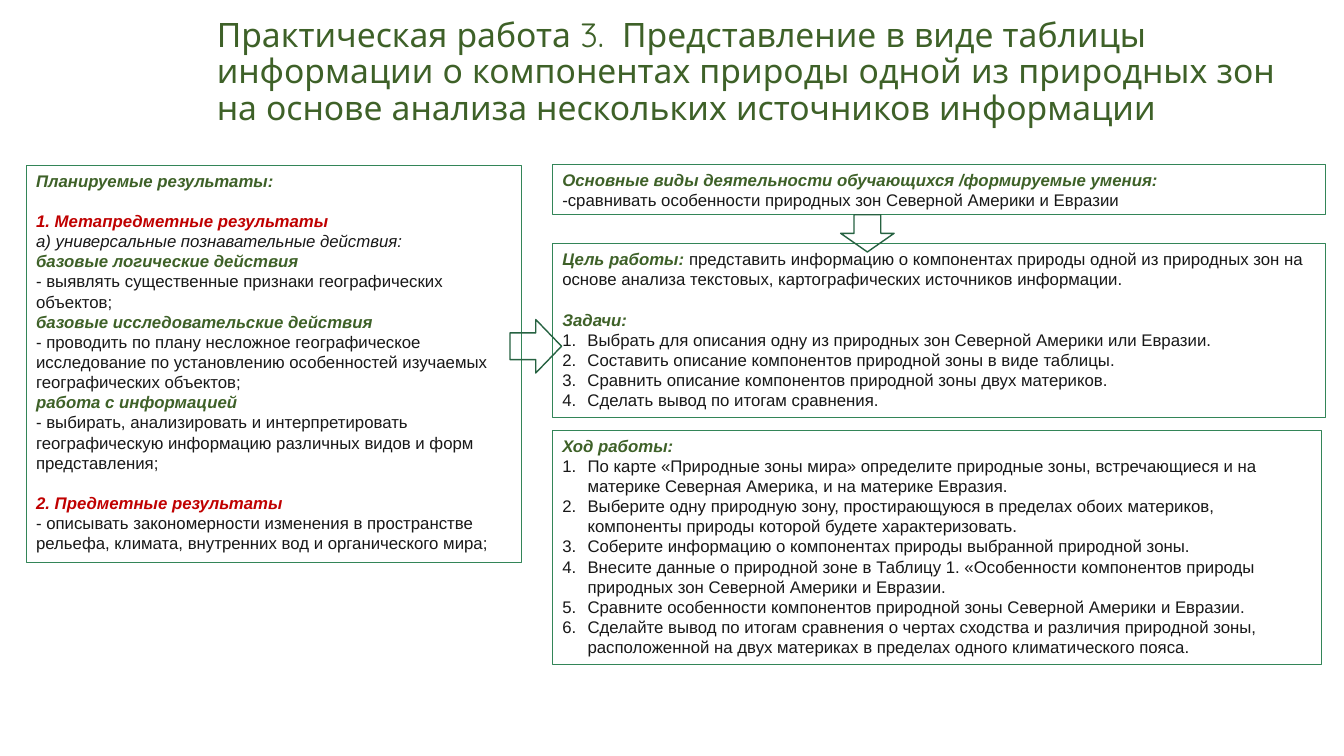
from pptx import Presentation
from pptx import util as u
from pptx.dml.color import RGBColor
from pptx.enum import shapes, text
from pptx.oxml import xmlchemy
from lxml import etree
from pptx.oxml.ns import qn

GREEN, RED, DARK = "3E6128", "C00000", "181818"
BORDER, ARROW = "338558", "266241"
GRID = 100

STYLES = {
    "heading": (GREEN, True, True),
    "result": (RED, True, True),
    "note": (DARK, False, True),
    "plain": (DARK, False, False),
    "item": (DARK, False, False),
}

TITLE = (
    "Практическая работа 3.  Представление в виде таблицы информации о компонентах "
    "природы одной из природных зон на основе анализа нескольких источников информации"
)
GOAL = [
    [("heading", "Цель работы: "),
     ("plain", "представить информацию о компонентах природы одной из природных зон на "
               "основе анализа текстовых, картографических источников информации.")],
    [("heading", "Задачи:")],
    [("item", "Выбрать для описания одну из природных зон Северной Америки или Евразии.")],
    [("item", "Составить описание компонентов природной зоны в виде таблицы.")],
    [("item", "Сравнить описание компонентов природной зоны двух материков.")],
    [("item", "Сделать вывод по итогам сравнения.")],
]
RESULTS = [
    [("heading", "Планируемые результаты:")],
    [("result", "1. Метапредметные результаты")],
    [("note", "а) универсальные познавательные действия:")],
    [("heading", "базовые логические действия")],
    [("plain", "- выявлять существенные признаки географических объектов;")],
    [("heading", "базовые исследовательские действия")],
    [("plain", "- проводить по плану несложное географическое исследование по "
               "установлению особенностей изучаемых географических объектов;")],
    [("heading", "работа с информацией")],
    [("plain", "- выбирать, анализировать и интерпретировать географическую информацию "
               "различных видов и форм представления;")],
    [("result", "2. Предметные результаты")],
    [("plain", "- описывать закономерности изменения в пространстве рельефа, климата, "
               "внутренних вод и органического мира;")],
]
ACTIVITIES = [
    [("heading", "Основные виды деятельности обучающихся /формируемые умения:")],
    [("plain", "-сравнивать особенности природных зон Северной Америки и Евразии")],
]
STEPS = [
    [("heading", "Ход работы:")],
    [("item", "По карте «Природные зоны мира» определите природные зоны, встречающиеся "
              "и на материке Северная Америка, и на материке Евразия.")],
    [("item", "Выберите одну природную зону, простирающуюся в пределах обоих материков, "
              "компоненты природы которой будете характеризовать.")],
    [("item", "Соберите информацию о компонентах природы выбранной природной зоны.")],
    [("item", "Внесите данные о природной зоне в Таблицу 1. «Особенности компонентов "
              "природы природных зон Северной Америки и Евразии.")],
    [("item", "Сравните особенности компонентов природной зоны Северной Америки и Евразии.")],
    [("item", "Сделайте вывод по итогам сравнения о чертах сходства и различия природной "
              "зоны, расположенной на двух материках в пределах одного климатического пояса.")],
]

presentation = Presentation()
presentation.slide_width = u.Inches(13.33)
presentation.slide_height = u.Inches(7.5)
COLUMN = presentation.slide_width / GRID
ROW = presentation.slide_height / GRID


def color(value):
    return RGBColor.from_string(value)


def grid(box):
    left, top, width, height = box
    return [round(n) for n in (left * COLUMN, top * ROW, width * COLUMN, height * ROW)]


def style_font(font, style):
    value, font.bold, font.italic = STYLES[style]
    font.color.rgb = color(value)


def number(paragraph):
    properties = paragraph._p.get_or_add_pPr()
    properties.set("marL", str(u.Inches(0.25)))
    properties.set("indent", str(u.Inches(-0.25)))
    etree.SubElement(properties, qn("a:buFont"), typeface="+mj-lt")
    etree.SubElement(properties, qn("a:buAutoNum"), type="arabicPeriod")


def outline(slide, kind, box, line_color, line_width):
    shape = slide.shapes.add_shape(kind, *grid(box))
    shape.shadow.inherit = False
    shape.fill.background()
    shape.line.color.rgb = color(line_color)
    shape.line.width = u.Pt(line_width)
    return shape


def title(slide, box):
    shape = slide.shapes.title
    shape.left, shape.top, shape.width, shape.height = grid(box)
    frame = shape.text_frame
    frame.text = TITLE
    frame.word_wrap = True
    frame.vertical_anchor = text.MSO_ANCHOR.MIDDLE
    paragraph = frame.paragraphs[0]
    paragraph.alignment = text.PP_ALIGN.LEFT
    paragraph.line_spacing = 0.9
    paragraph.font.name = "Quicksand"
    paragraph.font.size = u.Pt(24)
    paragraph.font.color.rgb = color(GREEN)


def panel(slide, box, content, spaced=()):
    shape = outline(slide, shapes.MSO_SHAPE.RECTANGLE, box, BORDER, 0.75)
    frame = shape.text_frame
    frame.word_wrap = True
    frame.auto_size = text.MSO_AUTO_SIZE.SHAPE_TO_FIT_TEXT
    frame.vertical_anchor = text.MSO_ANCHOR.TOP
    for index, runs in enumerate(content):
        paragraph = frame.add_paragraph() if index else frame.paragraphs[0]
        paragraph.alignment = text.PP_ALIGN.LEFT
        if index in spaced:
            paragraph.space_before = u.Pt(14.4)
        if runs[0][0] == "item":
            number(paragraph)
        paragraph.font.name = "Arial"
        paragraph.font.size = u.Pt(12)
        style_font(paragraph.font, runs[0][0])
        for style, words in runs:
            run = paragraph.add_run()
            run.text = words
            if len(runs) > 1:
                style_font(run.font, style)


def arrow(slide, box, kind):
    outline(slide, kind, box, ARROW, 1)


def practical_work(slide):
    right = 41.1
    title(slide, (15.38, 0, 81.7, 19.33))
    panel(slide, (right, 32.27, 57.5, 22.93), GOAL, spaced=(1,))
    panel(slide, (1.95, 21.87, 36.83, 52.53), RESULTS, spaced=(1, 9))
    panel(slide, (right, 21.73, 57.5, 6.67), ACTIVITIES)
    arrow(slide, (62.55, 28.4, 3.98, 4.93), shapes.MSO_SHAPE.DOWN_ARROW)
    arrow(slide, (37.95, 42.27, 3.83, 7.07), shapes.MSO_SHAPE.RIGHT_ARROW)
    panel(slide, (right, 56.93, 57.23, 30.93), STEPS)


practical_work(presentation.slides.add_slide(presentation.slide_layouts[5]))
presentation.save("out.pptx")
